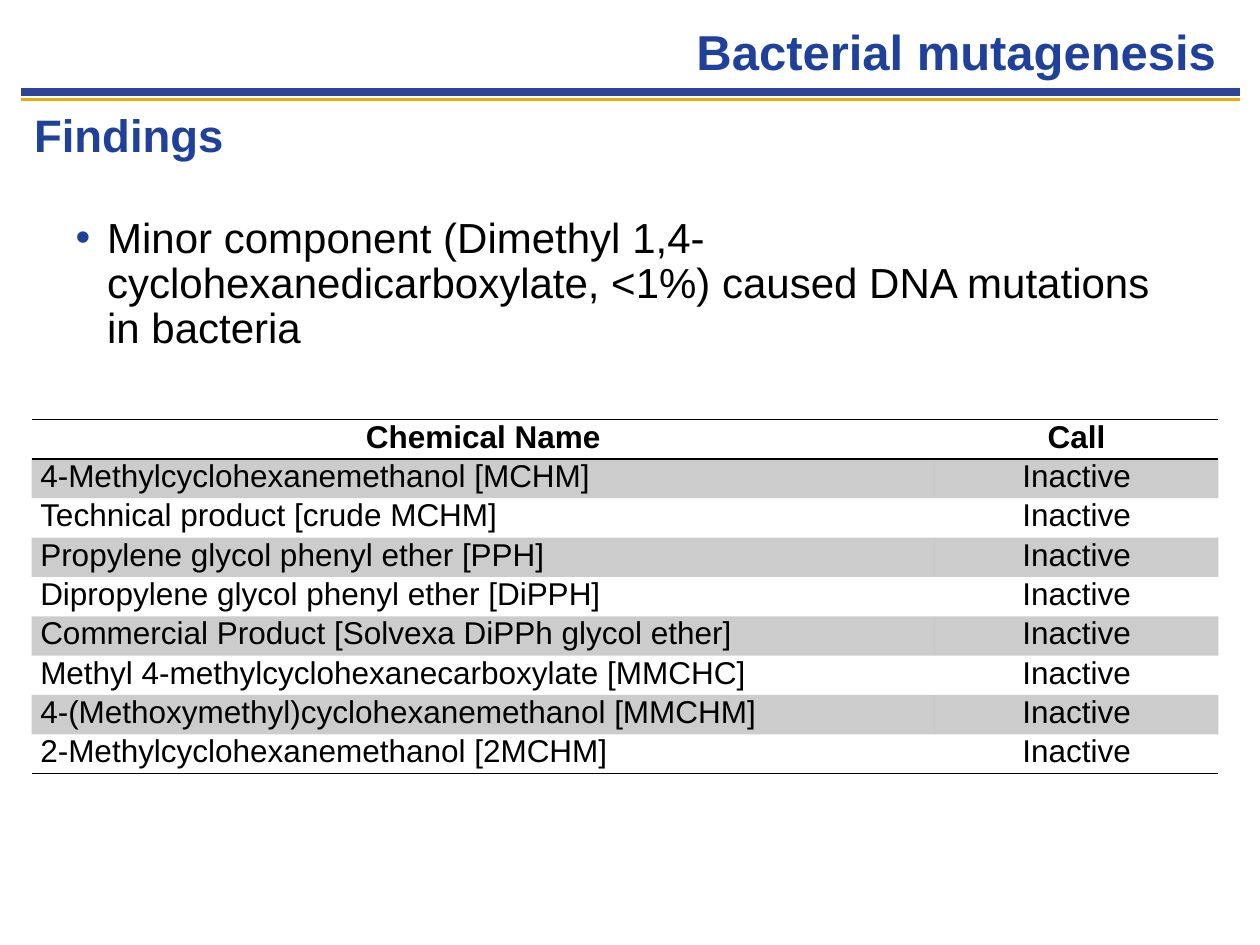
from dataclasses import dataclass

from lxml import etree
from pptx import Presentation
from pptx.dml.color import RGBColor
from pptx.enum.shapes import MSO_CONNECTOR
from pptx.enum.text import MSO_ANCHOR, MSO_AUTO_SIZE, PP_ALIGN
from pptx.oxml.ns import qn
from pptx.util import Inches, Pt

LEFT, CENTER, RIGHT = PP_ALIGN.LEFT, PP_ALIGN.CENTER, PP_ALIGN.RIGHT
TOP, BOTTOM = MSO_ANCHOR.TOP, MSO_ANCHOR.BOTTOM
NO_FIT = MSO_AUTO_SIZE.NONE
STRAIGHT = MSO_CONNECTOR.STRAIGHT
TWO_CONTENT_LAYOUT = 3
PLAIN_TABLE_STYLE = "{2D5ABB26-0587-4C30-8999-92F81FD0307C}"


@dataclass
class Theme:
    font: str = "Arial"
    heading: str = "1F419B"
    text: str = "000000"
    blue_rule: str = "2E4496"
    gold_rule: str = "EAAC0C"
    title_size: int = 28
    section_size: int = 26
    body_size: int = 24
    table_size: int = 18
    band_alpha: int = 20


theme = Theme()


def add_xml(parent, tag, **attributes):
    return etree.SubElement(parent, qn(tag), attributes)


def write(frame, text, *, size, color=theme.text, bold=False, align=LEFT,
          anchor=TOP, level=0, hanging=0, bullet=None, spacing=None):
    frame.word_wrap = True
    frame.vertical_anchor = anchor
    paragraph = frame.paragraphs[0]
    paragraph.text = text
    paragraph.level = level
    properties = paragraph._p.get_or_add_pPr()
    properties.set("marL", str(Inches(hanging)))
    properties.set("indent", str(-Inches(hanging)))
    if bullet:
        bullet_color = add_xml(properties, "a:buClr")
        add_xml(bullet_color, "a:srgbClr", val=theme.heading)
        add_xml(properties, "a:buFont", typeface=theme.font)
        add_xml(properties, "a:buChar", char=bullet)
    else:
        add_xml(properties, "a:buNone")
    paragraph.alignment = align
    paragraph.space_before = Pt(0)
    if spacing:
        paragraph.line_spacing = spacing
    font = paragraph.runs[0].font
    font.name, font.size, font.bold = theme.font, Pt(size), bold
    font.color.rgb = RGBColor.from_string(color)


prs = Presentation()
prs.slide_width, prs.slide_height = Inches(10), Inches(7.5)
slide = prs.slides.add_slide(prs.slide_layouts[TWO_CONTENT_LAYOUT])
title, section, finding = slide.placeholders

# Title, section heading and key finding
texts = [
    (title, (1.42, 0, 8.33, 0.69), "Bacterial mutagenesis",
     dict(size=theme.title_size, color=theme.heading, bold=True, align=RIGHT,
          anchor=BOTTOM)),
    (section, (0.17, 0.85, 8.92, 0.42), "Findings",
     dict(size=theme.section_size, color=theme.heading, bold=True,
          hanging=0.25, spacing=0.9)),
    (finding, (0.5, 1.67, 9, 5.25),
     "Minor component (Dimethyl 1,4-cyclohexanedicarboxylate, <1%) "
     "caused DNA mutations in bacteria",
     dict(size=theme.body_size, level=1, hanging=0.25, bullet="•",
          spacing=0.9)),
]
for holder, box, wording, text_format in texts:
    holder.left, holder.top, holder.width, holder.height = map(Inches, box)
    holder.text_frame.auto_size = NO_FIT
    write(holder.text_frame, wording, **text_format)

# Double rule under the title, behind the text
rules = [(0.79, theme.gold_rule, 2.25), (0.73, theme.blue_rule, 4.5)]
for position, (y, color, weight) in enumerate(rules, start=2):
    rule = slide.shapes.add_connector(
        STRAIGHT, Inches(0.17), Inches(y), Inches(9.84), Inches(y))
    rule.line.color.rgb = RGBColor.from_string(color)
    rule.line.width = Pt(weight)
    add_xml(rule._element.spPr, "a:effectLst")
    slide.shapes._spTree.insert(position, rule._element)

# Results table
chemicals = [
    "4-Methylcyclohexanemethanol [MCHM]",
    "Technical product [crude MCHM]",
    "Propylene glycol phenyl ether [PPH]",
    "Dipropylene glycol phenyl ether [DiPPH]",
    "Commercial Product [Solvexa DiPPh glycol ether]",
    "Methyl 4-methylcyclohexanecarboxylate [MMCHC]",
    "4-(Methoxymethyl)cyclohexanemethanol [MMCHM]",
    "2-Methylcyclohexanemethanol [2MCHM]",
]
results = [("Chemical Name", "Call")] + [(name, "Inactive") for name in chemicals]
last_row = len(results) - 1
table = slide.shapes.add_table(
    len(results), 2, Inches(0.25), Inches(3.33), Inches(9.42), Inches(2.81)).table
table.first_row = table.horz_banding = False
table._tbl.tblPr.find(qn("a:tableStyleId")).text = PLAIN_TABLE_STYLE
table.columns[0].width, table.columns[1].width = Inches(7.17), Inches(2.25)

for r, entries in enumerate(results):
    table.rows[r].height = Inches(2.81 / len(results))
    is_header = r == 0
    borders = {0: ("a:lnT", "a:lnB"), last_row: ("a:lnB",)}.get(r, ())
    for c, entry in enumerate(entries):
        cell = table.cell(r, c)
        cell.margin_left = cell.margin_right = Inches(0.07)
        cell.margin_top = cell.margin_bottom = 0
        write(cell.text_frame, entry, size=theme.table_size, bold=is_header,
              align=CENTER if is_header or c == 1 else LEFT)
        for side in borders:
            border = add_xml(cell._tc.get_or_add_tcPr(), side, w=str(Pt(1)))
            line_fill = add_xml(border, "a:solidFill")
            add_xml(line_fill, "a:srgbClr", val=theme.text)
        # Shade every other row with translucent black
        if r % 2:
            cell.fill.solid()
            cell.fill.fore_color.rgb = RGBColor.from_string(theme.text)
            shade = cell._tc.tcPr.find(qn("a:solidFill")).find(qn("a:srgbClr"))
            add_xml(shade, "a:alpha", val=str(theme.band_alpha * 1000))
        else:
            cell.fill.background()

prs.save("out.pptx")
